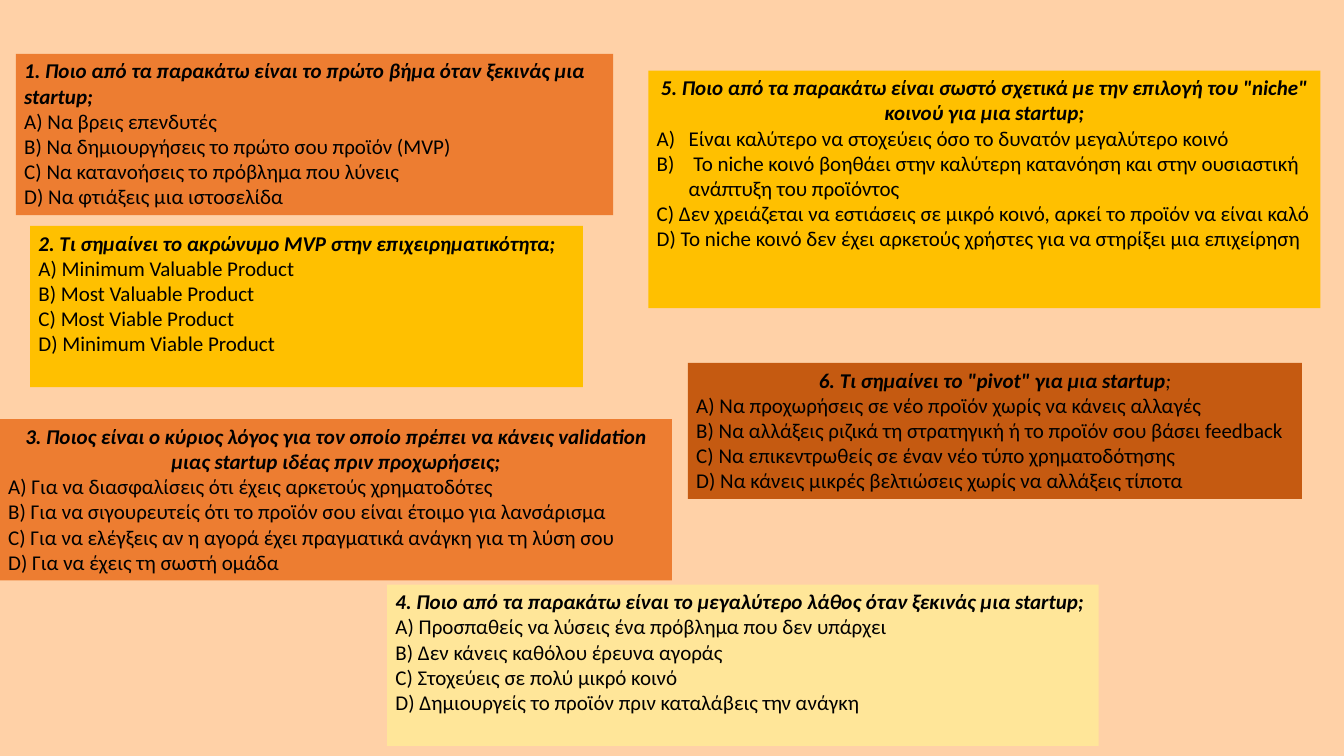
from dataclasses import dataclass

from lxml.etree import SubElement
from pptx import Presentation
from pptx.dml.color import RGBColor as RGB
from pptx.enum.text import MSO_ANCHOR as Anchor, MSO_AUTO_SIZE as Fit, PP_ALIGN as Align
from pptx.oxml.ns import qn
from pptx.util import Inches, Pt


@dataclass(frozen=True)
class Theme:
    back: str = "FFD1A7"
    ink: str = "000000"
    orange: str = "ED7D31"
    gold: str = "FFC000"
    cream: str = "FFE699"
    brown: str = "C55A11"
    font: str = "Calibri"
    size: int = 18


THEME = Theme()
HANG = 0.38


@dataclass(frozen=True)
class Quiz:
    """A question with its answers; the first `listed` answers are auto-numbered."""
    box: tuple
    fill: str
    ask: str
    answers: tuple
    centred: bool = False
    listed: int = 0
    tail: str = ""


QUIZZES = (
    Quiz((0.19, 0.64, 7.11, 1.92), THEME.orange,
         "Ποιο από τα παρακάτω είναι το πρώτο βήμα όταν ξεκινάς μια startup;",
         ("Να βρεις επενδυτές",
          "Να δημιουργήσεις το πρώτο σου προϊόν (MVP)",
          "Να κατανοήσεις το πρόβλημα που λύνεις",
          "Να φτιάξεις μια ιστοσελίδα")),
    Quiz((0.36, 2.69, 6.58, 1.92), THEME.gold,
         "Τι σημαίνει το ακρώνυμο MVP στην επιχειρηματικότητα;",
         ("Minimum Valuable Product", "Most Valuable Product",
          "Most Viable Product", "Minimum Viable Product")),
    Quiz((0, 4.99, 8, 1.92), THEME.orange,
         "Ποιος είναι ο κύριος λόγος για τον οποίο πρέπει να κάνεις validation "
         "μιας startup ιδέας πριν προχωρήσεις;",
         ("Για να διασφαλίσεις ότι έχεις αρκετούς χρηματοδότες",
          "Για να σιγουρευτείς ότι το προϊόν σου είναι έτοιμο για λανσάρισμα",
          "Για να ελέγξεις αν η αγορά έχει πραγματικά ανάγκη για τη λύση σου",
          "Για να έχεις τη σωστή ομάδα"), centred=True),
    Quiz((4.61, 6.96, 8.47, 1.92), THEME.cream,
         "Ποιο από τα παρακάτω είναι το μεγαλύτερο λάθος όταν ξεκινάς μια startup;",
         ("Προσπαθείς να λύσεις ένα πρόβλημα που δεν υπάρχει",
          "Δεν κάνεις καθόλου έρευνα αγοράς",
          "Στοχεύεις σε πολύ μικρό κοινό",
          "Δημιουργείς το προϊόν πριν καταλάβεις την ανάγκη")),
    Quiz((7.72, 0.84, 8, 2.83), THEME.gold,
         "Ποιο από τα παρακάτω είναι σωστό σχετικά με την επιλογή του \"niche\" "
         "κοινού για μια startup;",
         ("Είναι καλύτερο να στοχεύεις όσο το δυνατόν μεγαλύτερο κοινό",
          " Το niche κοινό βοηθάει στην καλύτερη κατανόηση και στην ουσιαστική "
          "ανάπτυξη του προϊόντος",
          "Δεν χρειάζεται να εστιάσεις σε μικρό κοινό, αρκεί το προϊόν να είναι καλό",
          "Το niche κοινό δεν έχει αρκετούς χρήστες για να στηρίξει μια επιχείρηση"),
         centred=True, listed=2),
    Quiz((8.19, 4.32, 7.31, 1.62), THEME.brown,
         "Τι σημαίνει το \"pivot\" για μια startup",
         ("Να προχωρήσεις σε νέο προϊόν χωρίς να κάνεις αλλαγές",
          "Να αλλάξεις ριζικά τη στρατηγική ή το προϊόν σου βάσει feedback",
          "Να επικεντρωθείς σε έναν νέο τύπο χρηματοδότησης",
          "Να κάνεις μικρές βελτιώσεις χωρίς να αλλάξεις τίποτα"),
         centred=True, tail=";"),
)


def paint(fill, colour):
    fill.solid()
    fill.fore_color.rgb = RGB.from_string(colour)


def add_run(para, text, bold=False, italic=False):
    run = para.add_run()
    run.text = text
    style = {"name": THEME.font, "size": Pt(THEME.size), "bold": bold, "italic": italic}
    for key, value in style.items():
        setattr(run.font, key, value)
    run.font.color.rgb = RGB.from_string(THEME.ink)


def set_letter(para):
    """Number the paragraph A), B), ... with a hanging indent."""
    props = para._p.get_or_add_pPr()
    props.set("marL", str(Inches(HANG)))
    props.set("indent", str(-Inches(HANG)))
    SubElement(props, qn("a:buFont"), typeface="+mj-lt")
    SubElement(props, qn("a:buAutoNum"), type="alphaUcParenR")


def add_quiz(slide, number, quiz):
    card = slide.shapes.add_textbox(*map(Inches, quiz.box))
    paint(card.fill, quiz.fill)
    frame = card.text_frame
    layout = {"word_wrap": True, "auto_size": Fit.NONE, "vertical_anchor": Anchor.TOP}
    for key, value in layout.items():
        setattr(frame, key, value)

    head = frame.paragraphs[0]
    head.alignment = Align.CENTER if quiz.centred else Align.LEFT
    add_run(head, f"{number}. {quiz.ask}", bold=True, italic=True)
    if quiz.tail:
        add_run(head, quiz.tail, italic=True)

    for place, (letter, answer) in enumerate(zip("ABCD", quiz.answers)):
        para = frame.add_paragraph()
        if place < quiz.listed:
            set_letter(para)
            add_run(para, answer)
        else:
            add_run(para, f"{letter}) {answer}")


def main():
    deck = Presentation()
    deck.slide_width, deck.slide_height = Inches(16), Inches(9)
    slide = deck.slides.add_slide(deck.slide_layouts[6])
    paint(slide.background.fill, THEME.back)
    for number, quiz in enumerate(QUIZZES, 1):
        add_quiz(slide, number, quiz)
    deck.save("out.pptx")


if __name__ == "__main__":
    main()
